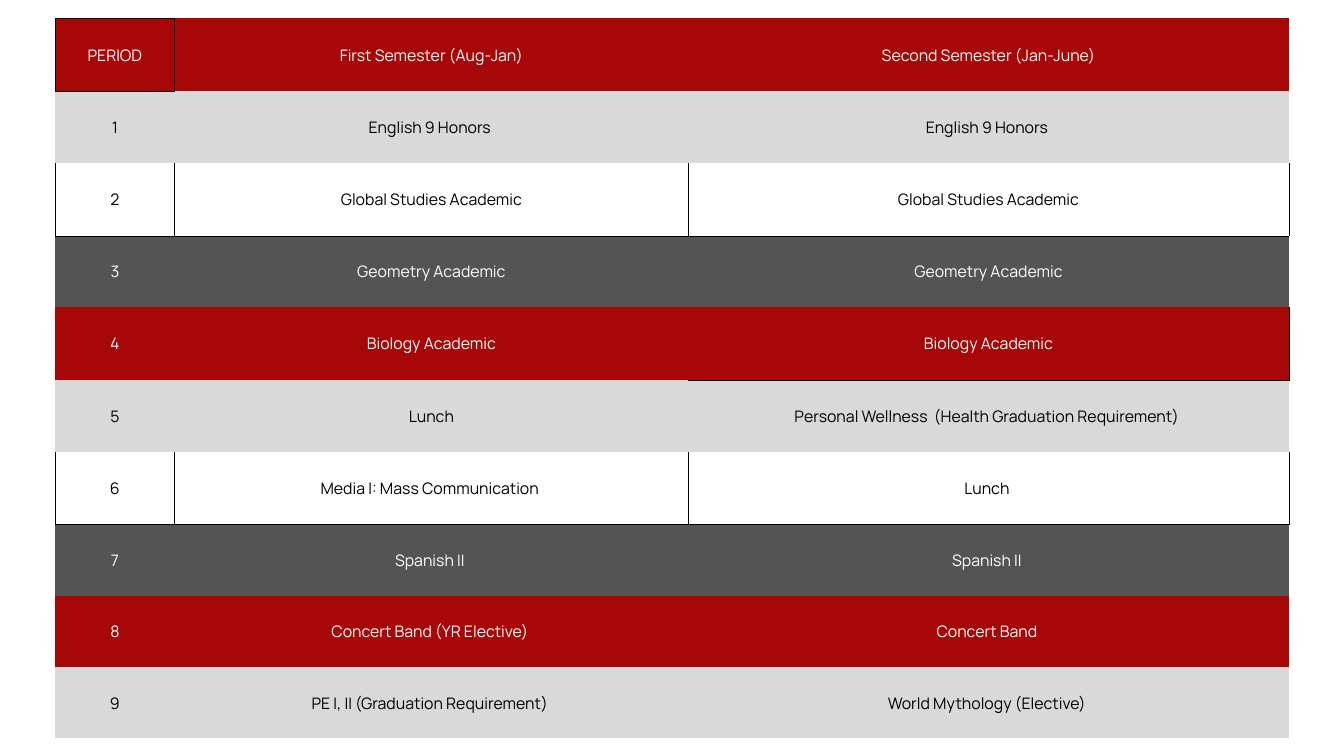
"""Build a class schedule slide: nine periods across two semesters."""
from lxml import etree
from pptx import Presentation, util as u
from pptx.dml.color import RGBColor
from pptx.enum import text
from pptx.oxml.ns import qn

RED = RGBColor(0xA8, 0x07, 0x07)
LIGHT = RGBColor(0xD9, 0xD9, 0xD9)
DARK = RGBColor(0x54, 0x54, 0x54)
WHITE = RGBColor(0xFF, 0xFF, 0xFF)
BLACK = RGBColor(0, 0, 0)

BANDS = [(RED, WHITE), (LIGHT, BLACK), (WHITE, BLACK), (DARK, WHITE)]
ROWS = [
    ("PERIOD", "First Semester (Aug-Jan)", "Second Semester (Jan-June)"),
    ("1", "English 9 Honors ", "English 9 Honors "),
    ("2", "Global Studies Academic", "Global Studies Academic"),
    ("3", "Geometry Academic", "Geometry Academic"),
    ("4", "Biology Academic", "Biology Academic"),
    ("5", "Lunch", "Personal Wellness  (Health Graduation Requirement) "),
    ("6", "Media I: Mass Communication ", "Lunch "),
    ("7", "Spanish II ", "Spanish II "),
    ("8", "Concert Band (YR Elective) ", "Concert Band "),
    ("9", "PE I, II (Graduation Requirement) ", "World Mythology (Elective) "),
]
WIDTHS = [1.78, 7.64, 8.94]
TALL = (0, 2, 4, 6)
HEIGHTS = [1.09 if row in TALL else 1.06 for row in range(len(ROWS))]

FRAMES = {(0, 0): "LRTB", (4, 2): "RB"}
FRAMES.update({(row, col): "LRB" for row in (2, 6) for col in range(3)})
NEXT = {"L": (0, -1, "R"), "R": (0, 1, "L"), "T": (-1, 0, "B"), "B": (1, 0, "T")}


def edge(cell, side, drawn):
    props = cell._tc.get_or_add_tcPr()
    line = etree.SubElement(props, qn(f"a:ln{side}"), w=str(u.Pt(0.75) if drawn else 0))
    if drawn:
        fill = etree.SubElement(line, qn("a:solidFill"))
        etree.SubElement(fill, qn("a:srgbClr"), val=str(BLACK))
    else:
        etree.SubElement(line, qn("a:noFill"))


deck = Presentation()
deck.slide_width, deck.slide_height = u.Inches(20), u.Inches(11.25)
slide = deck.slides.add_slide(deck.slide_layouts[6])
frame = slide.shapes.add_table(
    len(ROWS), len(WIDTHS), u.Inches(0.82), u.Inches(0.27),
    u.Inches(sum(WIDTHS)), u.Inches(sum(HEIGHTS)))
table = frame.table
table.first_row = table.horz_banding = False
for col, width in enumerate(WIDTHS):
    table.columns[col].width = u.Inches(width)

for row, words in enumerate(ROWS):
    table.rows[row].height = u.Inches(HEIGHTS[row])
    back, ink = BANDS[row % len(BANDS)]
    for col, label in enumerate(words):
        cell = table.cell(row, col)
        for side, (down, over, facing) in NEXT.items():
            own = side in FRAMES.get((row, col), "")
            shared = facing in FRAMES.get((row + down, col + over), "")
            edge(cell, side, own or shared)
        cell.fill.solid()
        cell.fill.fore_color.rgb = back
        cell.vertical_anchor = text.MSO_ANCHOR.MIDDLE
        cell.margin_left = cell.margin_right = u.Inches(0.21)
        cell.margin_top = cell.margin_bottom = u.Inches(0.21)
        para = cell.text_frame.paragraphs[0]
        para.text = label
        para.alignment = text.PP_ALIGN.CENTER
        para.line_spacing = u.Pt(23.8)
        font = para.runs[0].font
        font.name, font.size = "Manrope", u.Pt(17)
        font.color.rgb = ink

deck.save("out.pptx")
